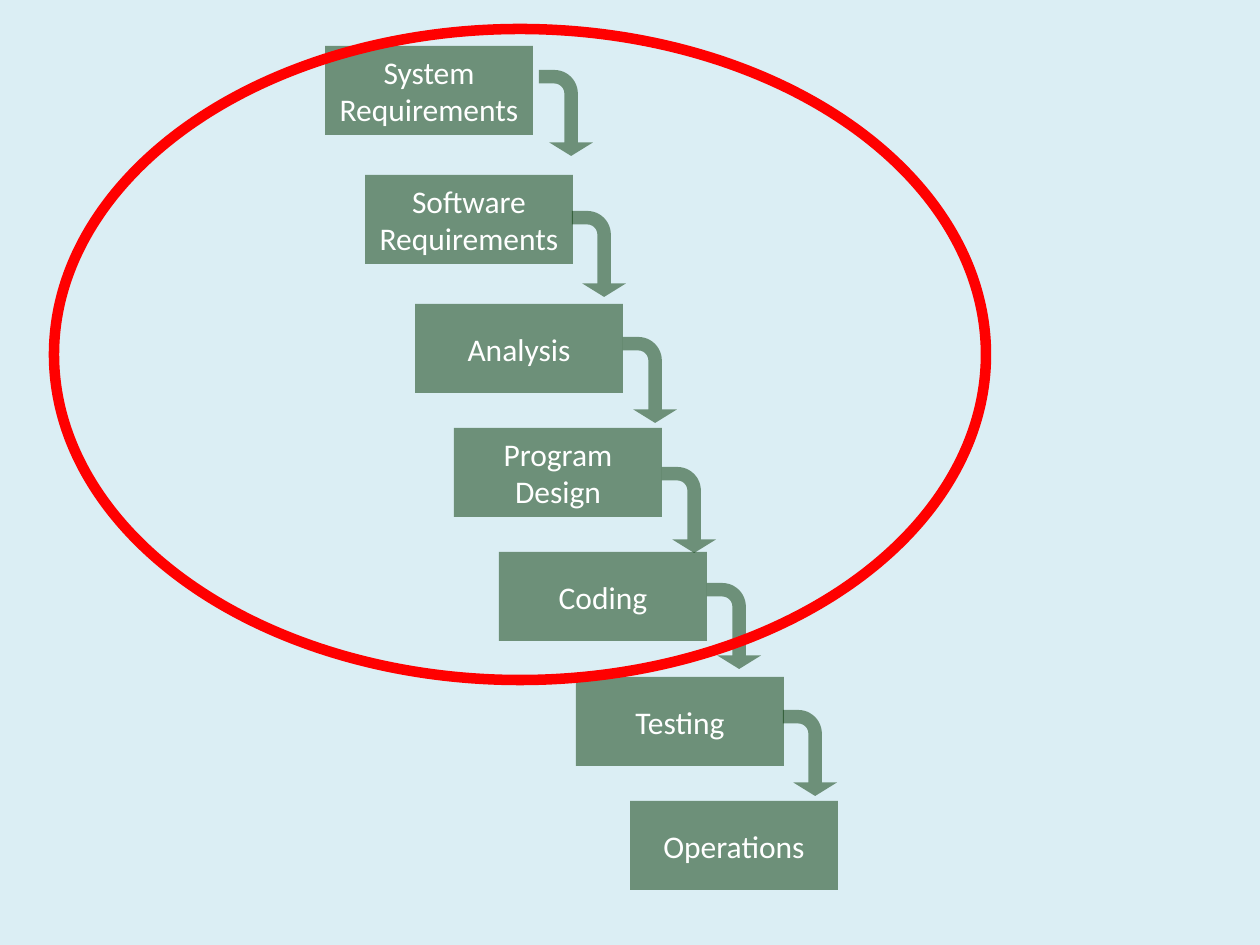
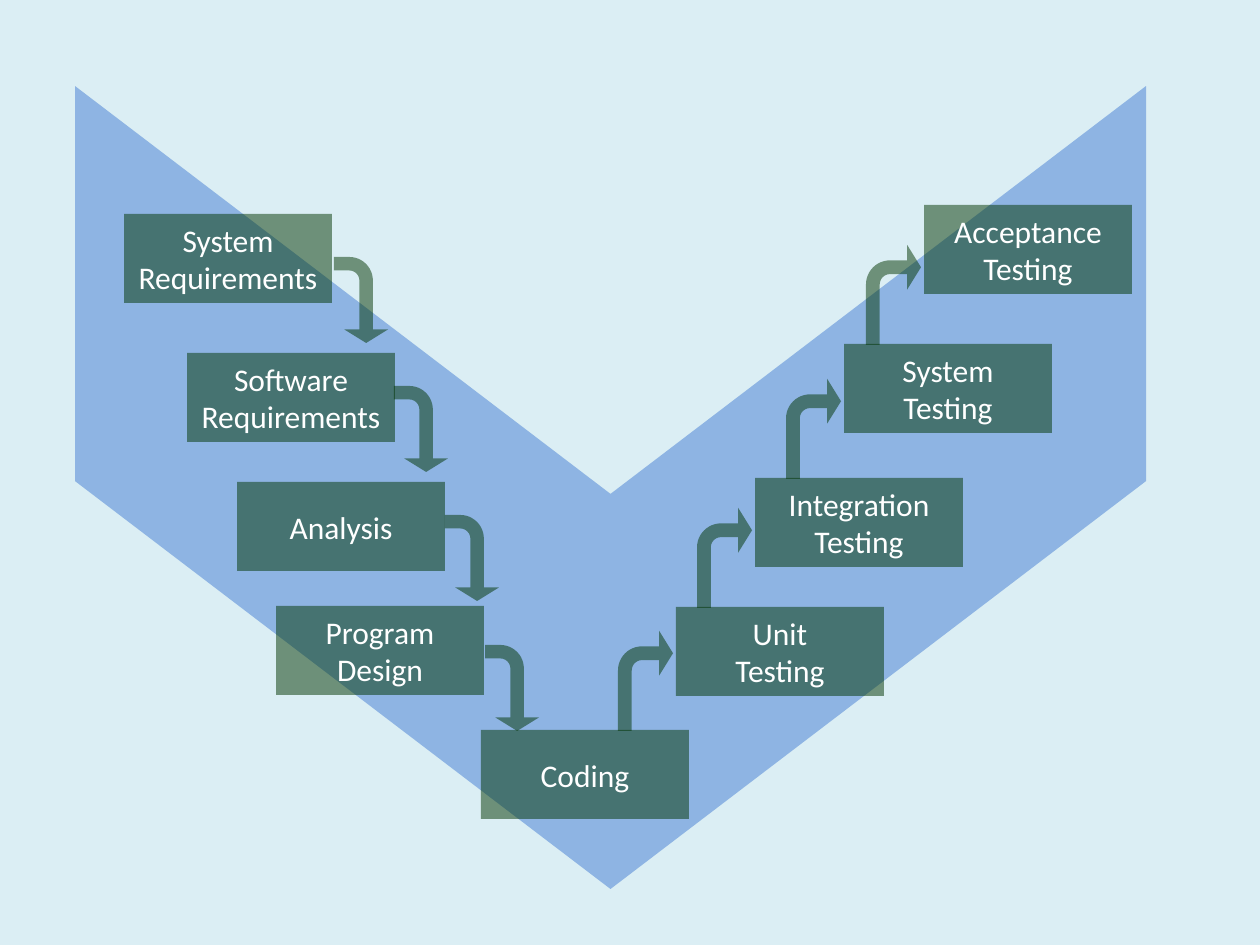
from pptx import Presentation
from pptx.dml.color import RGBColor
from pptx.enum.shapes import MSO_SHAPE as Preset
from pptx.enum.text import MSO_ANCHOR as Anchor, PP_ALIGN as Align
from pptx.oxml.ns import qn
from pptx.util import Pt
from lxml.etree import SubElement

EMU_PER_PX = 914400 / 126
SLIDE_WIDTH, SLIDE_HEIGHT = 1260, 945

PALE_BLUE = RGBColor(0xDB, 0xEE, 0xF4)
VALLEY_BLUE = RGBColor(0x8E, 0xB4, 0xE3)
DARK_GREEN = RGBColor(0x00, 0x33, 0x00)
WHITE = RGBColor(0xFF, 0xFF, 0xFF)
RED = RGBColor(0xFF, 0x00, 0x00)
FONT = "Calibri"

BOX_WIDTH, BOX_HEIGHT = 208, 89
FALL_LENGTH, FALL_BREADTH = 86, 54
RISE_WIDTH, RISE_HEIGHT = 55, 100
RISE_GAP, RISE_OVERLAP = 3, 1
BENT_ARROW = (0.25, 0.405, 0.25, 0.4375)

# Each step: text, box left and top, then the arrow's offset from the box's top right corner.
WATERFALL = [
    ("System\nRequirements", 325, 46, (6, 24)),
    ("Software\nRequirements", 365, 175, (-1, 36)),
    ("Analysis", 415, 304, (0, 33)),
    ("Program\nDesign", 454, 428, (0, 39)),
    ("Coding", 499, 552, (0, 31)),
    ("Testing", 576, 677, (-1, 33)),
    ("Operations", 630, 801, None),
]
HIGHLIGHT = (54, 29, 932, 651)

V_DESCENT = [
    ("System\nRequirements", 124, 214, (2, 43)),
    ("Software\nRequirements", 187, 353, (-1, 33)),
    ("Analysis", 237, 482, (0, 33)),
    ("Program\nDesign", 276, 606, (1, 39)),
    ("Coding", 481, 730, None),
]
V_ASCENT = [
    ("Unit\nTesting", 676, 607, None),
    ("Integration\nTesting", 755, 478, None),
    ("System\nTesting", 844, 344, None),
    ("Acceptance\nTesting", 924, 205, None),
]
VALLEY = (209, -48, 803, 1071)


def px(length):
    return round(length * EMU_PER_PX)


def add_preset(slide, preset, place, fill=None, opacity=100, line=None,
               line_width=0, rotation=0, adjustments=()):
    shape = slide.shapes.add_shape(preset, *map(px, place))
    shape.shadow.inherit = False
    shape.rotation = rotation
    for index, value in enumerate(adjustments):
        shape.adjustments[index] = value
    if fill is None:
        shape.fill.background()
    else:
        shape.fill.solid()
        shape.fill.fore_color.rgb = fill
        if opacity < 100:
            color = shape.element.spPr.find(qn("a:solidFill")).find(qn("a:srgbClr"))
            SubElement(color, qn("a:alpha"), val=str(opacity * 1000))
    if line is None:
        shape.line.fill.background()
    else:
        shape.line.color.rgb = line
        shape.line.width = Pt(line_width)
    return shape


def write_text(shape, text, size=18, color=WHITE, align=Align.CENTER,
               anchor=Anchor.MIDDLE):
    frame = shape.text_frame
    frame.text = text
    frame.word_wrap = True
    frame.vertical_anchor = anchor
    for paragraph in frame.paragraphs:
        paragraph.alignment = align
        paragraph.font.name = FONT
        paragraph.font.size = Pt(size)
        paragraph.font.color.rgb = color


def add_arrow(slide, place, rotation=0):
    add_preset(slide, Preset.BENT_ARROW, place, fill=DARK_GREEN, opacity=50,
               rotation=rotation, adjustments=BENT_ARROW)


def add_falling_arrow(slide, left, top):
    shift = (FALL_LENGTH - FALL_BREADTH) / 2
    add_arrow(slide, (left - shift, top + shift, FALL_LENGTH, FALL_BREADTH), rotation=90)


def add_steps(slide, steps):
    for text, left, top, arrow_offset in steps:
        box = add_preset(slide, Preset.RECTANGLE, (left, top, BOX_WIDTH, BOX_HEIGHT),
                         fill=DARK_GREEN, opacity=50)
        write_text(box, text)
        if arrow_offset:
            right_shift, down_shift = arrow_offset
            add_falling_arrow(slide, left + BOX_WIDTH + right_shift, top + down_shift)


def add_rising_arrows(slide, steps):
    for (_, _, lower_top, _), (_, upper_left, _, _) in zip(steps, steps[1:]):
        add_arrow(slide, (upper_left - RISE_GAP - RISE_WIDTH,
                          lower_top + RISE_OVERLAP - RISE_HEIGHT,
                          RISE_WIDTH, RISE_HEIGHT))


def add_slide(presentation):
    slide = presentation.slides.add_slide(presentation.slide_layouts[6])
    slide.background.fill.solid()
    slide.background.fill.fore_color.rgb = PALE_BLUE
    return slide


def build_waterfall(presentation):
    slide = add_slide(presentation)
    add_steps(slide, WATERFALL)
    add_preset(slide, Preset.OVAL, HIGHLIGHT, line=RED, line_width=6)


def build_v_model(presentation):
    slide = add_slide(presentation)
    add_preset(slide, Preset.CHEVRON, VALLEY, fill=VALLEY_BLUE, rotation=90,
               adjustments=(0.508,))
    add_steps(slide, V_DESCENT + V_ASCENT)
    add_rising_arrows(slide, V_DESCENT[-1:] + V_ASCENT)


def main():
    presentation = Presentation()
    presentation.slide_width = px(SLIDE_WIDTH)
    presentation.slide_height = px(SLIDE_HEIGHT)
    build_waterfall(presentation)
    build_v_model(presentation)
    presentation.save("out.pptx")


if __name__ == "__main__":
    main()
